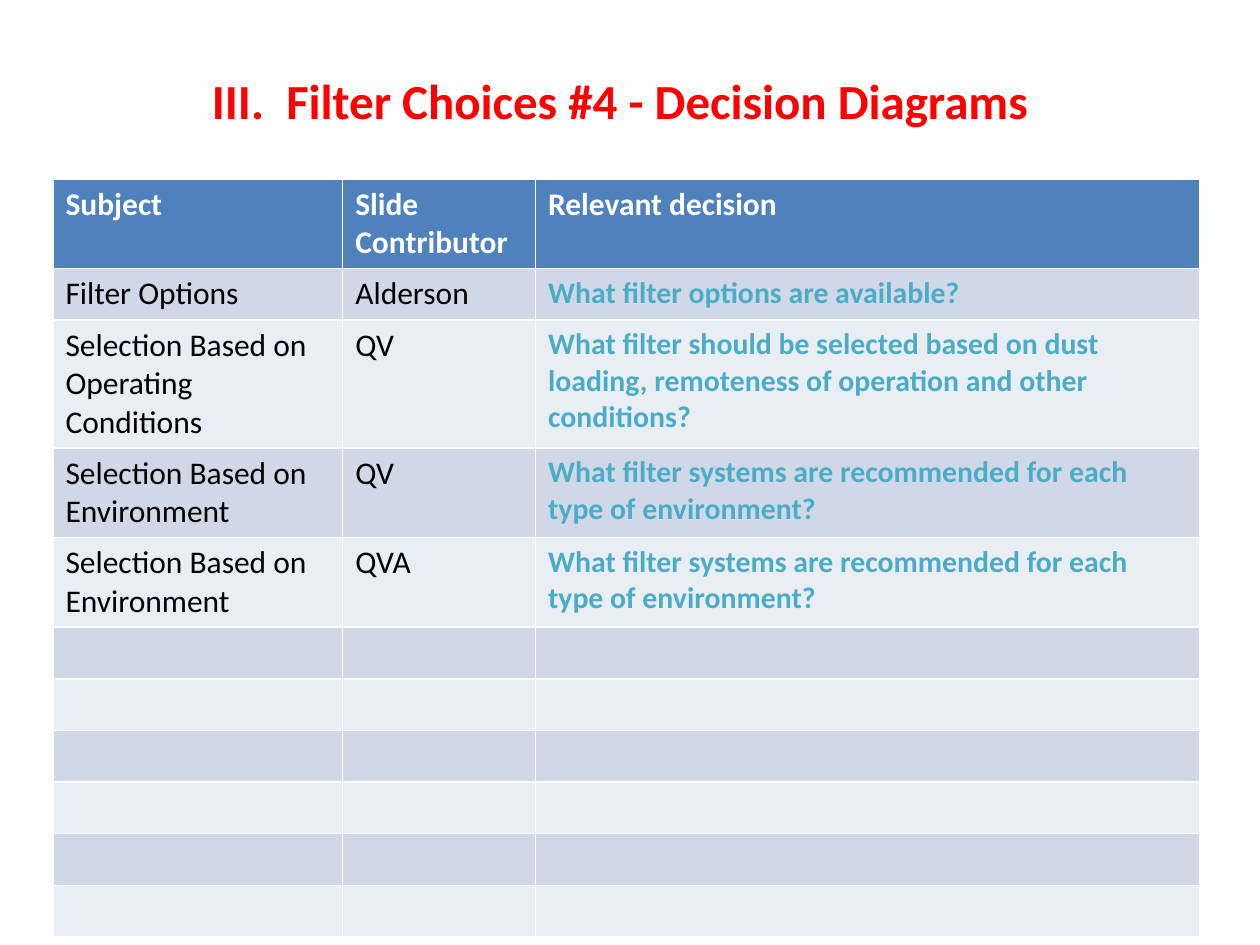
import pptx
import pptx.dml.color
import pptx.enum.text
import pptx.util

RGBColor = pptx.dml.color.RGBColor
Inches, Pt = pptx.util.Inches, pptx.util.Pt

RED = RGBColor(0xFF, 0x00, 0x00)
WHITE = RGBColor(0xFF, 0xFF, 0xFF)
BLACK = RGBColor(0x00, 0x00, 0x00)
AQUA = RGBColor(0x4B, 0xAC, 0xC6)
HEADER_BLUE = RGBColor(0x4F, 0x81, 0xBD)
BANDS = (RGBColor(0xE9, 0xED, 0xF4), RGBColor(0xD0, 0xD8, 0xE8))

FONT = "Calibri"
TITLE = "III.  Filter Choices #4 - Decision Diagrams"
HEADER = ("Subject", "Slide Contributor", "Relevant decision")
ENVIRONMENT_DECISION = "What filter systems are recommended for each type of environment?"
DECISIONS = [
    ("Filter Options", "Alderson", "What filter options are available?"),
    ("Selection Based on Operating Conditions", "QV",
     "What filter should be selected based on dust loading, "
     "remoteness of operation and other conditions?"),
    ("Selection Based on Environment", "QV", ENVIRONMENT_DECISION),
    ("Selection Based on Environment", "QVA", ENVIRONMENT_DECISION),
]
EMPTY_ROWS = 6
ROWS = [HEADER] + DECISIONS + [("", "", "")] * EMPTY_ROWS

LEFT, TITLE_TOP, TITLE_WIDTH, TITLE_HEIGHT = 0.42, 0.17, 9, 1.25
COLUMN_WIDTHS = (2.3, 1.53, 5.27)
ROW_HEIGHT = 0.41


def set_font(paragraph, size, color, bold):
    font = paragraph.font
    font.name, font.size, font.bold = FONT, Pt(size), bold
    font.color.rgb = color


def cell_format(row, column):
    """Return the size, text colour and weight for a table position."""
    if row == 0:
        return 18, WHITE, True
    if column == len(HEADER) - 1:
        return 17, AQUA, True
    return 18, BLACK, False


presentation = pptx.Presentation()
presentation.slide_width, presentation.slide_height = Inches(10), Inches(7.5)
slide = presentation.slides.add_slide(presentation.slide_layouts[5])

title = slide.shapes.title
title.left, title.top = Inches(LEFT), Inches(TITLE_TOP)
title.width, title.height = Inches(TITLE_WIDTH), Inches(TITLE_HEIGHT)
title.text_frame.text = TITLE
title.text_frame.vertical_anchor = pptx.enum.text.MSO_ANCHOR.MIDDLE
title.text_frame.paragraphs[0].alignment = pptx.enum.text.PP_ALIGN.CENTER
set_font(title.text_frame.paragraphs[0], 28, RED, True)

decision_table = slide.shapes.add_table(
    len(ROWS), len(HEADER), Inches(LEFT), Inches(TITLE_TOP + TITLE_HEIGHT),
    Inches(sum(COLUMN_WIDTHS)), Inches(ROW_HEIGHT * len(ROWS))).table
for column, width in zip(decision_table.columns, COLUMN_WIDTHS):
    column.width = Inches(width)

for r, texts in enumerate(ROWS):
    decision_table.rows[r].height = Inches(ROW_HEIGHT)
    for c, text in enumerate(texts):
        cell = decision_table.cell(r, c)
        cell.fill.solid()
        cell.fill.fore_color.rgb = BANDS[r % 2] if r else HEADER_BLUE
        if text:
            cell.text = text
            set_font(cell.text_frame.paragraphs[0], *cell_format(r, c))

presentation.save("out.pptx")
